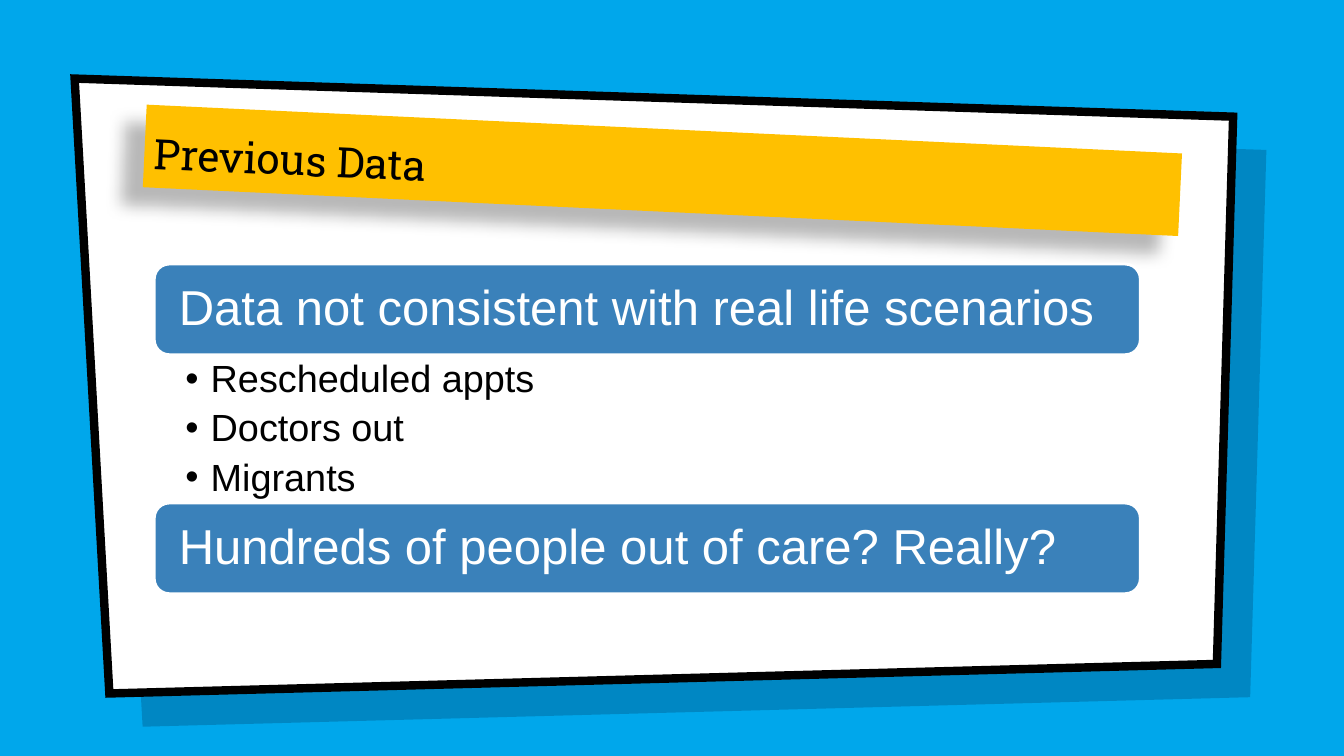
from lxml import etree
from pptx import Presentation
from pptx.dml.color import RGBColor
from pptx.enum.shapes import MSO_SHAPE
from pptx.enum.text import MSO_ANCHOR, MSO_AUTO_SIZE, PP_ALIGN
from pptx.oxml.ns import qn
from pptx.util import Inches, Pt

ROUND = MSO_SHAPE.ROUNDED_RECTANGLE
TOP, MIDDLE, BOTTOM = MSO_ANCHOR.TOP, MSO_ANCHOR.MIDDLE, MSO_ANCHOR.BOTTOM
NO_FIT = MSO_AUTO_SIZE.NONE
LEFT = PP_ALIGN.LEFT

WIDTH, HEIGHT = 13.33, 7.5
SKY, NAVY, GOLD, STEEL = "00A7EB", "001936", "FFC000", "3A81BA"
WHITE, BLACK = "FFFFFF", "000000"
CORNERS = [(0, 0), (1, 0.062), (0.986, 0.952), (0.03, 1)]


def paint(fill, color):
    fill.solid()
    fill.fore_color.rgb = RGBColor.from_string(color)


def add(parent, tag, **attrs):
    return etree.SubElement(parent, qn(tag), {k: str(v) for k, v in attrs.items()})


def place(shape, box):
    shape.left, shape.top, shape.width, shape.height = map(Inches, box)


def frame(shape, anchor, sides, ends):
    text = shape.text_frame
    text.word_wrap = True
    text.auto_size = NO_FIT
    text.vertical_anchor = anchor
    text.margin_left = text.margin_right = Inches(sides)
    text.margin_top = text.margin_bottom = Inches(ends)
    return text


def style(para, font, size, color, line=1.0, after=0):
    para.alignment = LEFT
    para.line_spacing = line
    para.space_before, para.space_after = Pt(0), Pt(after)
    para.font.name = font
    para.font.size = Pt(size)
    paint(para.font.fill, color)


def panel(slide, box, color):
    left, top, width, height = box
    spots = [(Inches(left + x * width), Inches(top + y * height)) for x, y in CORNERS]
    pen = slide.shapes.build_freeform(*spots[0])
    pen.add_line_segments(spots[1:], close=True)
    shape = pen.convert_to_shape()
    shape.shadow.inherit = False
    paint(shape.fill, color)
    return shape


def board(slide, box, shift):
    left, top, width, height = box
    shade = panel(slide, (left + shift, top + shift, width, height), NAVY)
    shade.line.fill.background()
    tint = shade.fill._xPr.find(".//" + qn("a:srgbClr"))
    add(tint, "a:alpha", val=22000)
    sheet = panel(slide, box, WHITE)
    paint(sheet.line.fill, BLACK)
    sheet.line.width = Pt(6)
    add(sheet.line._get_or_add_ln(), "a:miter", lim=800000)


def banner(slide, box, words):
    title = slide.shapes.title
    slide.shapes._spTree.append(title._element)
    place(title, box)
    title.rotation = 2.7
    paint(title.fill, GOLD)
    effects = add(title._element.spPr, "a:effectLst")
    shadow = add(effects, "a:outerShdw", blurRad=Pt(11.8), dist=Pt(19.7),
                 dir=141 * 60000, algn="tr", rotWithShape=0)
    add(add(shadow, "a:srgbClr", val=BLACK), "a:alpha", val=28000)
    text = frame(title, BOTTOM, 0.1, 0.1)
    text.text = words
    style(text.paragraphs[0], "Roboto Slab", 30, BLACK)


def card(slide, box, words):
    shape = slide.shapes.add_shape(ROUND, *map(Inches, box))
    shape.shadow.inherit = False
    paint(shape.fill, STEEL)
    paint(shape.line.fill, WHITE)
    shape.line.width = Pt(2)
    text = frame(shape, MIDDLE, 0.2, 0.15)
    text.text = words
    style(text.paragraphs[0], "Arial", 35, WHITE, 0.9)


def points(slide, box, items):
    body = slide.placeholders[1]
    slide.shapes._spTree.append(body._element)
    place(body, box)
    text = frame(body, TOP, 0.31, 0.05)
    text.text = "\n".join(items)
    for para in text.paragraphs:
        style(para, "Arial", 27, BLACK, 0.9, 6)
        props = para._p.get_or_add_pPr()
        props.set("marL", str(Inches(0.25)))
        props.set("indent", str(Inches(-0.25)))
        add(props, "a:buChar", char="•")


def content(slide, box):
    left, top, width, height = box
    bar = 0.275 * height
    gap = height - 2 * bar
    card(slide, (left, top, width, bar), "Data not consistent with real life scenarios")
    points(slide, (left, top + bar, width, gap),
           ["Rescheduled appts", "Doctors out", "Migrants"])
    card(slide, (left, top + bar + gap, width, bar),
         "Hundreds of people out of care? Really?")


def main():
    deck = Presentation()
    deck.slide_width, deck.slide_height = Inches(WIDTH), Inches(HEIGHT)
    slide = deck.slides.add_slide(deck.slide_layouts[1])
    paint(slide.background.fill, SKY)
    board(slide, (0.74, 0.78, 11.49, 6.1), 0.33)
    banner(slide, (1.43, 1.28, 10.28, 0.82), "Previous Data")
    content(slide, (1.53, 2.62, 9.78, 3.27))
    deck.save("out.pptx")


if __name__ == "__main__":
    main()
